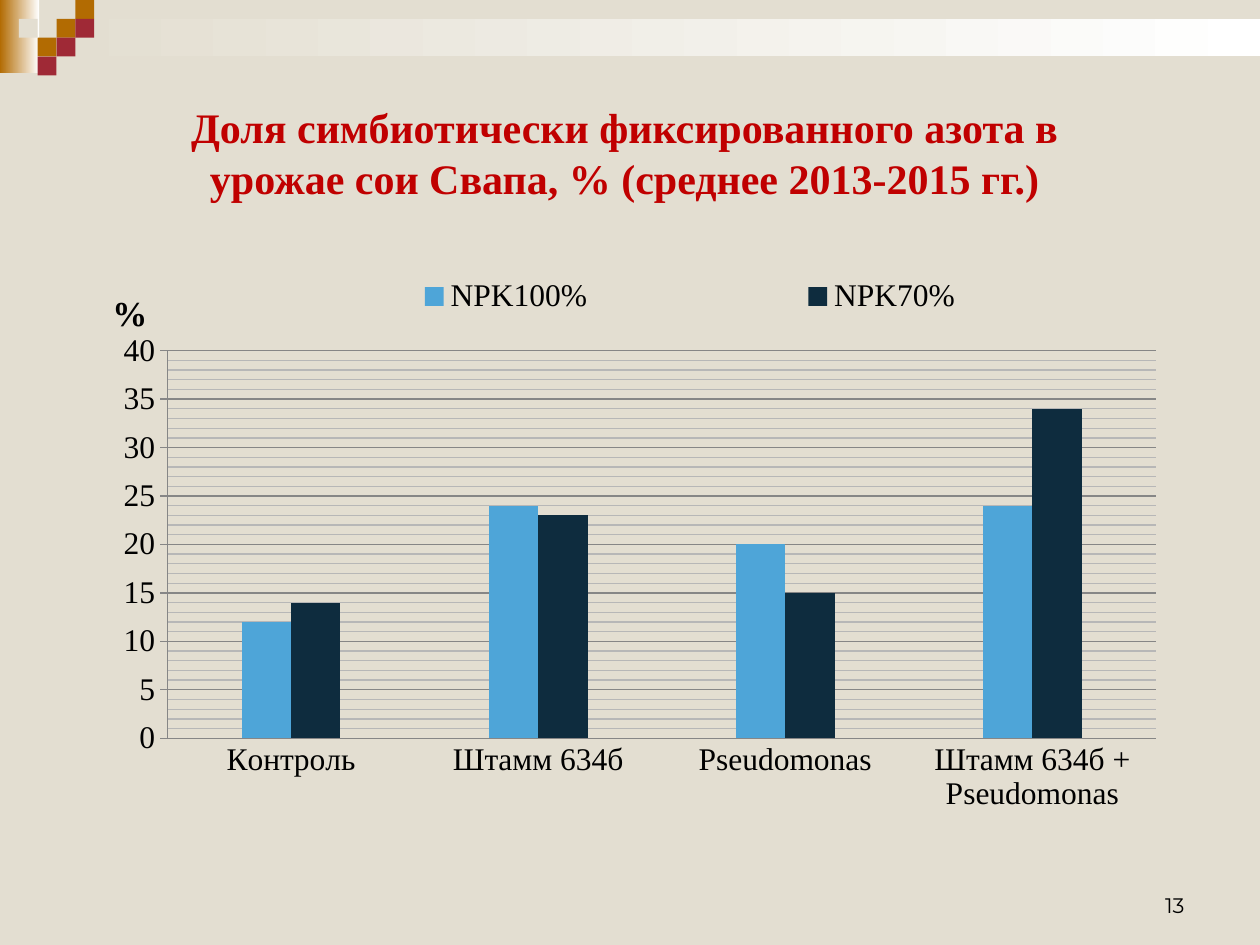
from lxml.etree import SubElement
from pptx import Presentation
from pptx.chart.data import CategoryChartData
from pptx.dml.color import RGBColor
from pptx.enum.chart import XL_CHART_TYPE, XL_LEGEND_POSITION, XL_TICK_MARK
from pptx.enum.shapes import MSO_SHAPE
from pptx.enum.text import MSO_ANCHOR, PP_ALIGN
from pptx.oxml.ns import qn
from pptx.util import Cm, Pt

SAND, OCHRE, WINE, WHITE = "E3DED1", "B26B02", "9F2936", "FFFFFF"
SERIF = "Times New Roman"
CELL = 0.38


def color(value):
    return RGBColor.from_string(value)


def set_font(font, size, name=SERIF, bold=False, hex_color="000000"):
    font.name, font.size, font.bold = name, Pt(size), bold
    font.color.rgb = color(hex_color)


def add_text(page, box, text, align=PP_ALIGN.LEFT, anchor=MSO_ANCHOR.TOP, **font):
    frame = page.shapes.add_textbox(*map(Cm, box)).text_frame
    frame.word_wrap = True
    frame.vertical_anchor = anchor
    para = frame.paragraphs[0]
    para.alignment = align
    span = para.add_run()
    span.text = text
    set_font(span.font, **font)


def add_rect(page, box, *colors):
    """One colour gives a solid fill, two give a left-to-right gradient."""
    rect = page.shapes.add_shape(MSO_SHAPE.RECTANGLE, *map(Cm, box))
    rect.shadow.inherit = False
    rect.line.fill.background()
    if len(colors) == 1:
        rect.fill.solid()
        rect.fill.fore_color.rgb = color(colors[0])
    else:
        rect.fill.gradient()
        rect.fill.gradient_angle = 0
        for stop, value in zip(rect.fill.gradient_stops, colors):
            stop.color.rgb = color(value)


def add_header(page, left, top, width):
    add_rect(page, (left, top, 0.79, 1.47), OCHRE, WHITE)
    band = 3 * CELL
    add_rect(page, (left + band, top + CELL, width - band, 2 * CELL), SAND, WHITE)
    squares = [(3, 1, OCHRE), (4, 0, OCHRE), (4, 1, WINE), (2, 2, OCHRE),
               (1, 1, SAND), (3, 2, WINE), (2, 3, WINE)]
    for column, row, fill in squares:
        add_rect(page, (left + column * CELL, top + row * CELL, CELL, CELL), fill)


def set_layout(part, x, y, w=None, h=None, inner=False):
    """Place a chart part by fractions of the chart's size."""
    layout = part.find(qn("c:layout"))
    if layout is None:
        layout = part.makeelement(qn("c:layout"))
        before = part.find(qn("c:overlay"))
        if before is not None:
            before.addprevious(layout)
        else:
            part.insert(0, layout)
    for child in list(layout):
        layout.remove(child)
    manual = SubElement(layout, qn("c:manualLayout"))
    settings = [("layoutTarget", "inner" if inner else None),
                ("xMode", "edge"), ("yMode", "edge"),
                ("x", x), ("y", y), ("w", w), ("h", h)]
    for tag, value in settings:
        if value is not None:
            SubElement(manual, qn("c:" + tag)).set("val", str(value))


def set_line(line, hex_color):
    line.color.rgb = color(hex_color)
    line.width = Pt(0.75)


def format_axes(chart):
    categories, values = chart.category_axis, chart.value_axis
    for axis in (categories, values):
        set_font(axis.tick_labels.font, 18)
        set_line(axis.format.line, "868686")
        axis.minor_tick_mark = XL_TICK_MARK.NONE
    categories.major_tick_mark = XL_TICK_MARK.NONE
    values.major_tick_mark = XL_TICK_MARK.OUTSIDE
    values.minimum_scale, values.maximum_scale = 0, 40
    values.major_unit, values.minor_unit = 5, 1
    values.has_major_gridlines = values.has_minor_gridlines = True
    set_line(values.major_gridlines.format.line, "868686")
    minor = values.major_gridlines._xAx.find(qn("c:minorGridlines"))
    shape = SubElement(minor, qn("c:spPr"))
    line = SubElement(shape, qn("a:ln"), w=str(Pt(0.75)))
    fill = SubElement(line, qn("a:solidFill"))
    SubElement(fill, qn("a:srgbClr"), val="B7B7B7")

    title = values.axis_title
    para = title.text_frame.paragraphs[0]
    span = para.add_run()
    span.text = "%"
    set_font(span.font, 20, bold=True)
    body = title._element.find(".//" + qn("a:bodyPr"))
    body.set("rot", "0")
    body.set("vert", "horz")
    set_layout(title._element, 0.02, 0.07)


def add_nitrogen_chart(page, box):
    data = CategoryChartData()
    data.categories = ["Контроль", "Штамм 634б", "Pseudomonas",
                       "Штамм 634б + Pseudomonas"]
    data.add_series("NPK100%", (12, 24, 20, 24))
    data.add_series("NPK70%", (14, 23, 15, 34))
    chart = page.shapes.add_chart(
        XL_CHART_TYPE.COLUMN_CLUSTERED, *map(Cm, box), data).chart
    chart.has_title = False
    set_font(chart.font, 10, name="Arial")
    plot = chart.plots[0]
    plot.gap_width, plot.overlap, plot.vary_by_categories = 300, 0, False
    for series, fill in zip(plot.series, ("4EA5D8", "0E2C3E")):
        series.format.fill.solid()
        series.format.fill.fore_color.rgb = color(fill)
    format_axes(chart)
    chart.has_legend = True
    legend = chart.legend
    legend.position = XL_LEGEND_POSITION.TOP
    legend.include_in_layout = False
    set_font(legend.font, 18)
    set_layout(legend._element, 0.12, 0.04, 0.88, 0.1)
    plot_area = chart._chartSpace.find(".//" + qn("c:plotArea"))
    set_layout(plot_area, 0.077, 0.184, 0.914, 0.672, inner=True)


def main():
    deck = Presentation()
    deck.slide_width, deck.slide_height = Cm(25.4), Cm(19.05)
    page = deck.slides.add_slide(deck.slide_layouts[6])
    page.background.fill.solid()
    page.background.fill.fore_color.rgb = color(SAND)
    add_header(page, 0, 0, 25.4)
    add_text(page, (18.2, 17.35, 5.93, 1.27), "13", align=PP_ALIGN.RIGHT,
             anchor=MSO_ANCHOR.BOTTOM, size=12, name="Montserrat")
    add_nitrogen_chart(page, (1.7, 4.93, 21.8, 11.63))
    add_text(page, (2.49, 1.93, 20.2, 2.31),
             "Доля симбиотически фиксированного азота в урожае сои Свапа, % "
             "(среднее 2013-2015 гг.)",
             align=PP_ALIGN.CENTER, size=24, bold=True, hex_color="C00000")
    deck.save("out.pptx")


if __name__ == "__main__":
    main()
